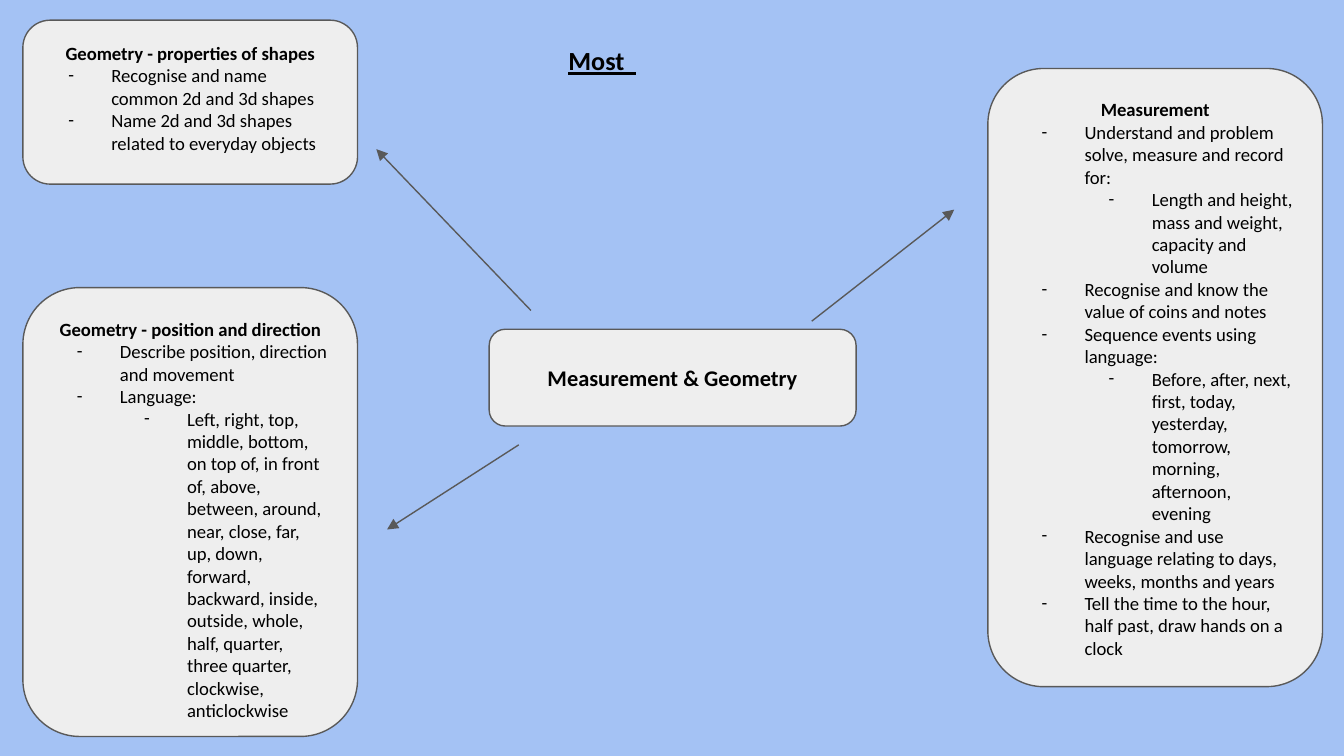
"""Builds a mind map of measurement and geometry topics on one slide."""
from dataclasses import dataclass

import pptx
import pptx.dml.color
import pptx.enum.shapes
import pptx.enum.text
import pptx.oxml
import pptx.oxml.ns
import pptx.util
from pptx.util import Inches

ALIGN = pptx.enum.text.PP_ALIGN
ANCHOR = pptx.enum.text.MSO_ANCHOR
FONT = "Calibri"
INK, EDGE, PANEL, SKY = "000000", "595959", "EEEEEE", "A4C2F4"


@dataclass
class Point:
    text: str
    level: int = 0


@dataclass
class Card:
    left: float
    top: float
    width: float
    height: float
    title: str
    points: tuple[Point, ...] = ()
    size: int = 10
    anchor: ANCHOR = ANCHOR.TOP
    corner: float = 1 / 6


@dataclass
class Arrow:
    start: tuple[float, float]
    end: tuple[float, float]


CARDS = (
    Card(3.64, 2.45, 2.73, 0.72, "Measurement & Geometry", size=12, anchor=ANCHOR.MIDDLE),
    Card(7.35, 0.51, 2.49, 4.6, "Measurement", (
        Point("Understand and problem solve, measure and record for:"),
        Point("Length and height, mass and weight, capacity and volume", 1),
        Point("Recognise and know the value of coins and notes"),
        Point("Sequence events using language:"),
        Point("Before, after, next, first, today, yesterday, tomorrow, "
              "morning, afternoon, evening", 1),
        Point("Recognise and use language relating to days, weeks, months and years"),
        Point("Tell the time to the hour, half past, draw hands on a clock"),
    )),
    Card(0.17, 0.15, 2.49, 1.22, "Geometry - properties of shapes", (
        Point("Recognise and name common 2d and 3d shapes"),
        Point("Name 2d and 3d shapes related to everyday objects"),
    )),
    Card(0.17, 2.14, 2.49, 3.34, "Geometry - position and direction", (
        Point("Describe position, direction and movement"),
        Point("Language:"),
        Point("Left, right, top, middle, bottom, on top of, in front of, above, "
              "between, around, near, close, far, up, down, forward, backward, "
              "inside, outside, whole, half, quarter, three quarter, clockwise, "
              "anticlockwise", 1),
    ), corner=0.17),
)

ARROWS = (
    Arrow((6.04, 2.39), (7.1, 1.56)),
    Arrow((3.86, 3.31), (2.88, 3.94)),
    Arrow((3.95, 2.31), (2.8, 1.11)),
)


def paint(target, color: str) -> None:
    target.rgb = pptx.dml.color.RGBColor.from_string(color)


def fill(target, color: str) -> None:
    target.solid()
    paint(target.fore_color, color)


def outline(line) -> None:
    fill(line.fill, EDGE)
    line.width = pptx.util.Pt(0.75)


def child(parent, tag: str, **attrs: str):
    node = pptx.oxml.parse_xml(f"<{tag} {pptx.oxml.ns.nsdecls('a')}/>")
    for name, value in attrs.items():
        node.set(name, value)
    parent.append(node)
    return node


def frame(shape, anchor: ANCHOR):
    body = shape.text_frame
    body.word_wrap = True
    body.vertical_anchor = anchor
    body.margin_left = body.margin_right = Inches(0.1)
    body.margin_top = body.margin_bottom = Inches(0.1)
    return body


def write(para, text: str, size: int, bold: bool = False, under: bool = False) -> None:
    run = para.add_run()
    run.text = text
    font = run.font
    font.name, font.size, font.bold = FONT, pptx.util.Pt(size), bold
    if under:
        font.underline = True
    paint(font.color, INK)


def bullet(para, point: Point) -> None:
    para.level = point.level
    para.alignment = ALIGN.LEFT
    props = para._p.get_or_add_pPr()
    props.set("marL", str(Inches(0.5 * (point.level + 1))))
    props.set("indent", str(Inches(-0.32)))
    child(child(props, "a:buClr"), "a:srgbClr", val=INK)
    child(props, "a:buFont", typeface=FONT)
    child(props, "a:buChar", char="-")


def draw_card(slide, card: Card) -> None:
    shape = slide.shapes.add_shape(
        pptx.enum.shapes.MSO_SHAPE.ROUNDED_RECTANGLE,
        Inches(card.left), Inches(card.top), Inches(card.width), Inches(card.height))
    shape.adjustments[0] = card.corner
    shape.shadow.inherit = False
    fill(shape.fill, PANEL)
    outline(shape.line)
    body = frame(shape, card.anchor)
    head = body.paragraphs[0]
    head.alignment = ALIGN.CENTER
    write(head, card.title, card.size, bold=True)
    for point in card.points:
        para = body.add_paragraph()
        bullet(para, point)
        write(para, point.text, card.size)


def draw_arrow(slide, arrow: Arrow) -> None:
    ends = [Inches(value) for value in arrow.start + arrow.end]
    line = slide.shapes.add_connector(pptx.enum.shapes.MSO_CONNECTOR.STRAIGHT, *ends)
    outline(line.line)
    child(line.line._get_or_add_ln(), "a:tailEnd", type="triangle", w="med", len="med")
    child(line._element.spPr, "a:effectLst")


def draw_title(slide, text: str) -> None:
    box = slide.shapes.add_textbox(Inches(4.13), Inches(0.23), Inches(2.19), Inches(0.52))
    body = frame(box, ANCHOR.TOP)
    write(body.paragraphs[0], text, 14, bold=True, under=True)


def main() -> None:
    deck = pptx.Presentation()
    deck.slide_width, deck.slide_height = Inches(10), Inches(10 * 9 / 16)
    slide = deck.slides.add_slide(deck.slide_layouts[6])
    fill(slide.background.fill, SKY)
    for card in CARDS:
        draw_card(slide, card)
    for arrow in ARROWS:
        draw_arrow(slide, arrow)
    draw_title(slide, "Most  ")
    deck.save("out.pptx")


if __name__ == "__main__":
    main()
